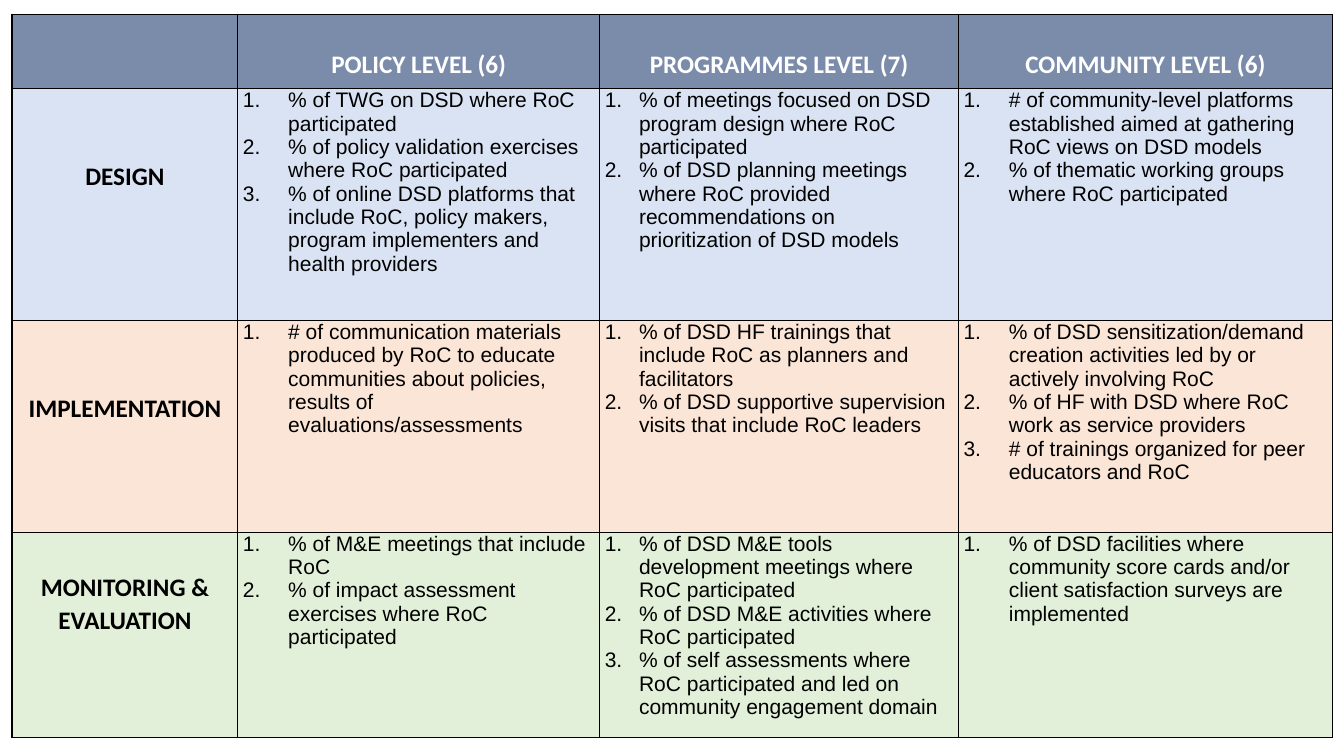
from lxml.etree import SubElement as Sub
from pptx import Presentation
from pptx.dml.color import RGBColor as RGB
from pptx.enum.text import MSO_ANCHOR as Anchor, PP_ALIGN as Align
from pptx.oxml import parse_xml
from pptx.oxml.ns import nsdecls, qn
from pptx.util import Pt

BLACK = RGB(0, 0, 0)
WHITE = RGB(255, 255, 255)
SLATE = RGB(0x7B, 0x8C, 0xAA)
BLUE = RGB(0xDA, 0xE3, 0xF3)
PEACH = RGB(0xFB, 0xE5, 0xD6)
GREEN = RGB(0xE2, 0xF0, 0xD9)

BOX = (8.6, 10.1)
WIDTHS = (161.3, 258.5, 256.3, 267.1)
HEIGHTS = (53.3, 165.6, 151.2, 146.9)
INDENTS = (32.4, 24.5, 32.4)
LINE = 23.5

HEADS = ("", "POLICY LEVEL (6)", "PROGRAMMES LEVEL (7)", "COMMUNITY LEVEL (6)")
STAGES = (
    ("DESIGN", BLUE, 2, (
        ("% of TWG on DSD where RoC participated",
         "% of policy validation exercises where RoC participated",
         "% of online DSD platforms that include RoC, policy makers, "
         "program implementers and health providers"),
        ("% of meetings focused on DSD program design where RoC participated",
         "% of DSD planning meetings where RoC provided recommendations "
         "on prioritization of DSD models"),
        ("# of community-level platforms established aimed at gathering "
         "RoC views on DSD models",
         "% of thematic working groups where RoC participated"))),
    ("IMPLEMENTATION", PEACH, 2, (
        ("# of communication materials produced by RoC to educate communities "
         "about policies, results of evaluations/assessments",),
        ("% of DSD HF trainings that include RoC as planners and facilitators",
         "% of DSD supportive supervision visits that include RoC leaders"),
        ("% of DSD sensitization/demand creation activities led by "
         "or actively involving RoC",
         "% of HF with DSD where RoC work as service providers",
         "# of trainings organized for peer educators and RoC"))),
    ("MONITORING & EVALUATION", GREEN, 1, (
        ("% of M&E meetings that include RoC",
         "% of impact assessment exercises where RoC participated"),
        ("% of DSD M&E tools development meetings where RoC participated",
         "% of DSD M&E activities where RoC participated",
         "% of self assessments where RoC participated and led on "
         "community engagement domain"),
        ("% of DSD facilities where community score cards and/or client "
         "satisfaction surveys are implemented",))),
)

LABEL = {"size": Pt(18), "name": "Calibri", "bold": True}
ITEM = {"size": Pt(15), "name": "Arial", "bold": False}


def style(font, form, color):
    """Apply a dict of format values and a colour to a font."""
    for key, val in form.items():
        setattr(font, key, val)
    font.color.rgb = color


def frame(cell, fill, side, top, base):
    """Fill a cell, set its margins and draw its four borders."""
    cell.fill.solid()
    cell.fill.fore_color.rgb = fill
    margins = {"margin_left": side, "margin_right": side,
               "margin_top": top, "margin_bottom": base}
    for key, val in margins.items():
        setattr(cell, key, Pt(val))
    cell.vertical_anchor = Anchor.TOP
    props = cell._tc.get_or_add_tcPr()
    for spot, edge in enumerate("LRTB"):
        props.insert(spot, parse_xml(
            f'<a:ln{edge} {nsdecls("a")} w="{Pt(1)}"><a:solidFill>'
            f'<a:srgbClr val="{BLACK}"/></a:solidFill></a:ln{edge}>'))


def label(cell, text, color):
    """Write a centred bold label in a cell."""
    para = cell.text_frame.paragraphs[0]
    para.text = text
    para.alignment = Align.CENTER
    para.line_spacing = 1.07
    style(para.font, LABEL, color)


def items(cell, texts, indent):
    """Write a numbered list in a cell."""
    body = cell.text_frame
    for num, text in enumerate(texts):
        para = body.add_paragraph() if num else body.paragraphs[0]
        para.text = text
        props = para._p.get_or_add_pPr()
        props.set("marL", str(Pt(indent)))
        props.set("indent", str(-Pt(indent)))
        Sub(props, qn("a:buFont"), typeface="+mj-lt")
        Sub(props, qn("a:buAutoNum"), type="arabicPeriod")
        style(para.font, ITEM, BLACK)


def header(row):
    """Build the row of level names."""
    for cell, text in zip(row.cells, HEADS):
        frame(cell, SLATE, 3.6, LINE, 0)
        label(cell, text, WHITE)


def stage(row, name, fill, skip, lists):
    """Build one stage row: its name, then a list for each level."""
    first, *rest = row.cells
    frame(first, fill, 7.2, 3.6 + skip * LINE, 3.6)
    label(first, name, BLACK)
    for cell, texts, indent in zip(rest, lists, INDENTS):
        frame(cell, fill, 3.6, 0, 0)
        items(cell, texts, indent)


def matrix(slide, left, top):
    """Place the table of indicators by stage and level."""
    grid = slide.shapes.add_table(
        len(HEIGHTS), len(WIDTHS), Pt(left), Pt(top),
        Pt(sum(WIDTHS)), Pt(sum(HEIGHTS))).table
    grid.horz_banding = False
    for col, width in zip(grid.columns, WIDTHS):
        col.width = Pt(width)
    for row, height in zip(grid.rows, HEIGHTS):
        row.height = Pt(height)
    head, *rows = grid.rows
    header(head)
    for row, data in zip(rows, STAGES):
        stage(row, *data)


def main():
    """Build and save the slide."""
    deck = Presentation()
    deck.slide_width, deck.slide_height = Pt(960), Pt(540)
    matrix(deck.slides.add_slide(deck.slide_layouts[6]), *BOX)
    deck.save("out.pptx")


if __name__ == "__main__":
    main()
